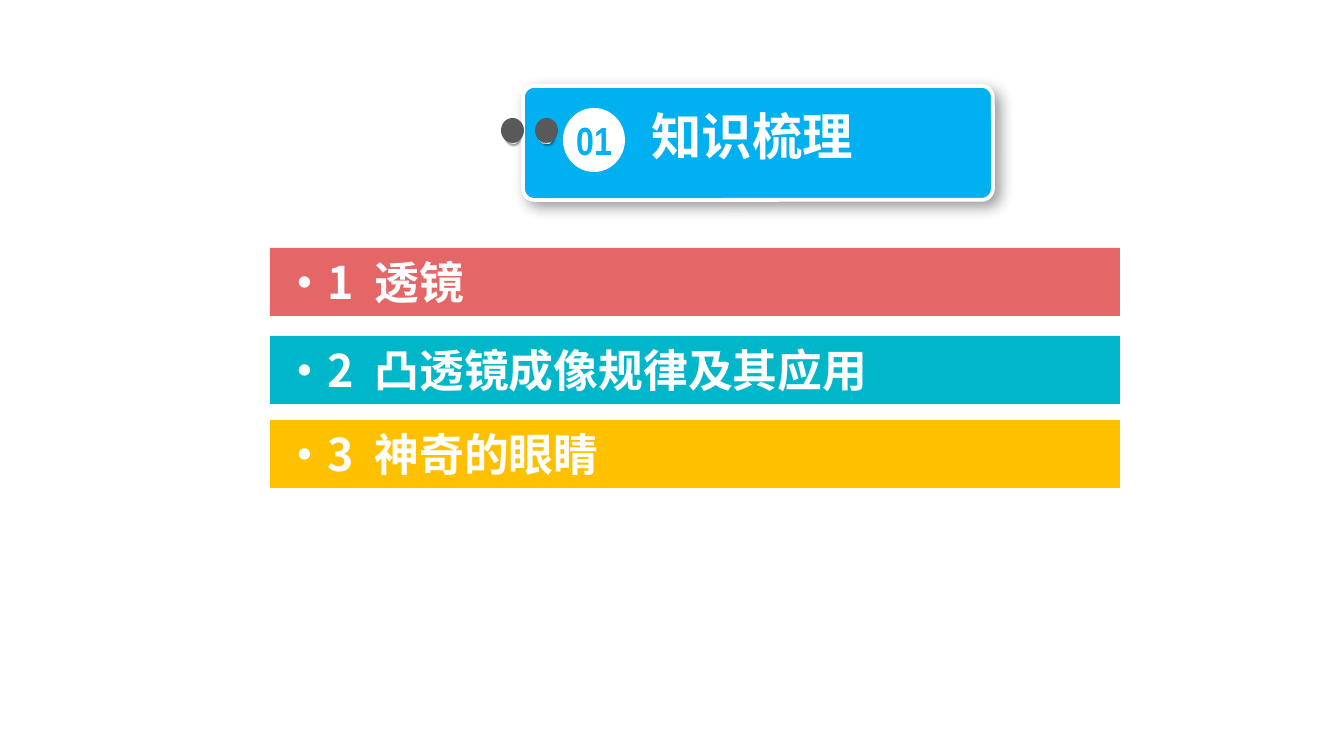
from lxml.etree import SubElement
from pptx import Presentation
from pptx.dml.color import RGBColor
from pptx.enum.shapes import MSO_SHAPE
from pptx.enum.text import MSO_ANCHOR, MSO_AUTO_SIZE, PP_ALIGN
from pptx.oxml.ns import qn
from pptx.util import Pt

TITLE = "知识梳理"
BADGE = "01"
ROWS = [
    ("·1 透镜", "red", 248),
    ("·2 凸透镜成像规律及其应用", "teal", 336),
    ("·3 神奇的眼睛", "gold", 420),
]
HOLES = [535, 501]

THEME = {
    "blue": "00B0F0", "white": "FFFFFF", "gray": "595959", "black": "000000",
    "red": "E56666", "teal": "00B7CA", "gold": "FFC000",
    "metal": [(0, "FFFFFF"), (17, "A6A6A6"), (35, "F2F2F2"),
              (55, "A6A6A6"), (75, "F2F2F2"), (100, "A6A6A6")],
    "sans": "Noto Sans CJK SC", "slim": "Arial Narrow",
    "title": 27, "badge": 21, "row": 24, "gap": 5.4,
}
SCALE = 914400 / 134.4


def px(*nums):
    return [round(n * SCALE) for n in nums]


def tint(name):
    return RGBColor.from_string(THEME[name])


def draw(kind, box, color):
    shape = slide.shapes.add_shape(kind, *px(*box))
    shape.shadow.inherit = False
    shape.fill.solid()
    shape.fill.fore_color.rgb = tint(color)
    shape.line.fill.background()
    return shape


def shade(shape, blur, dist):
    effects = shape._element.spPr.find(qn("a:effectLst"))
    outer = SubElement(effects, qn("a:outerShdw"), blurRad=str(Pt(blur)),
                       dist=str(Pt(dist)), dir="2700000", algn="tl", rotWithShape="0")
    color = SubElement(outer, qn("a:srgbClr"), val=THEME["black"])
    SubElement(color, qn("a:alpha"), val="40000")


def polish(shape):
    shape.fill.gradient()
    shape.fill.gradient_angle = 315
    stops = shape._element.spPr.find(qn("a:gradFill")).find(qn("a:gsLst"))
    stops.clear()
    for place, color in THEME["metal"]:
        stop = SubElement(stops, qn("a:gs"), pos=str(place * 1000))
        SubElement(stop, qn("a:srgbClr"), val=color)


def write(shape, text, size, face, color, align, inset=0):
    frame = shape.text_frame
    frame.text = text
    frame.word_wrap = True
    frame.auto_size = MSO_AUTO_SIZE.NONE
    frame.vertical_anchor = MSO_ANCHOR.MIDDLE
    frame.margin_top = frame.margin_bottom = 0
    frame.margin_left = frame.margin_right = px(inset)[0]
    line = frame.paragraphs[0]
    line.alignment = align
    head, space, tail = text.partition(" ")
    line.runs[0].text = head
    for part in filter(None, (space, tail)):
        line.add_run().text = part
    for run in line.runs:
        font = run.font
        font.name, font.size, font.bold = THEME[face], Pt(THEME[size]), True
        font.color.rgb = tint(color)
        props = run._r.get_or_add_rPr()
        SubElement(props, qn("a:ea"), typeface=THEME[face])
        if run.text == " ":
            props.set("spc", str(round(THEME["gap"] * 100)))


deck = Presentation()
deck.slide_width, deck.slide_height = px(1344, 756)
slide = deck.slides.add_slide(deck.slide_layouts[5])

plate = draw(MSO_SHAPE.ROUNDED_RECTANGLE, (523, 86, 470, 114), "blue")
plate.adjustments[0] = 0.1
plate.line.color.rgb = tint("white")
plate.line.width = Pt(2)
shade(plate, 8, 4)

for left in HOLES:
    rim = draw(MSO_SHAPE.OVAL, (left + 4, 130, 14, 14), "white")
    rim.rotation = 270
    polish(rim)
    shade(rim, 1, 1)
    draw(MSO_SHAPE.OVAL, (left, 118, 23, 25), "gray")

draw(MSO_SHAPE.OVAL, (563, 108, 62, 64), "white")
badge = slide.shapes.add_textbox(*px(558, 109, 72, 62))
write(badge, BADGE, "badge", "slim", "blue", PP_ALIGN.CENTER)

title = slide.shapes.title
title.left, title.top, title.width, title.height = px(603, 98, 298, 75)
write(title, TITLE, "title", "sans", "white", PP_ALIGN.CENTER)
slide.shapes._spTree.append(title._element)

for text, color, top in ROWS:
    bar = draw(MSO_SHAPE.RECTANGLE, (270, top, 850, 68), color)
    write(bar, text, "row", "sans", "white", PP_ALIGN.LEFT, 13)

deck.save("out.pptx")
